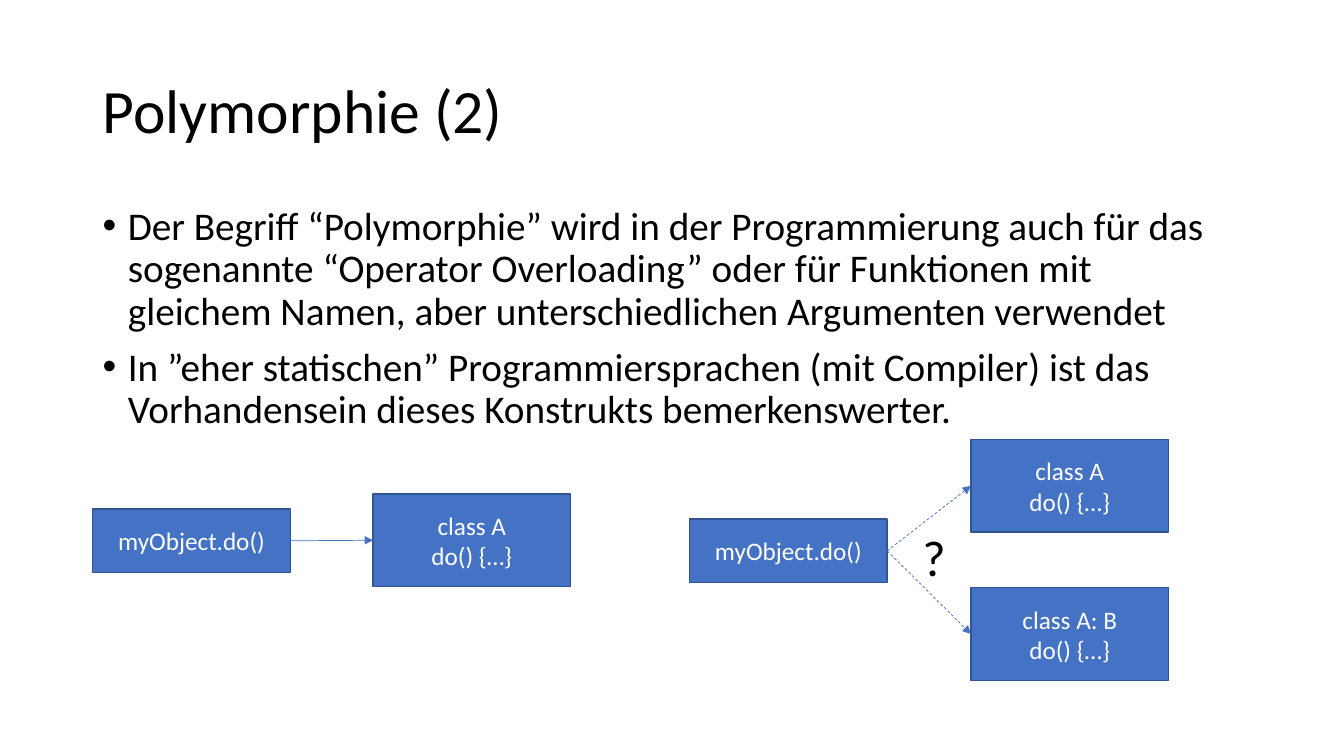
from dataclasses import dataclass

from lxml.etree import SubElement
from pptx import Presentation
from pptx.dml.color import RGBColor as Color
from pptx.enum.dml import MSO_LINE_DASH_STYLE as Dash
from pptx.enum.shapes import MSO_CONNECTOR as Connector, MSO_SHAPE as Preset
from pptx.enum.text import MSO_ANCHOR as Anchor, MSO_AUTO_SIZE as AutoSize, PP_ALIGN as Align
from pptx.oxml.ns import qn
from pptx.shapes.autoshape import Shape
from pptx.slide import Slide
from pptx.text.text import _Paragraph as Paragraph
from pptx.util import Inches, Pt


@dataclass(frozen=True)
class Theme:
    font: str = "Calibri"
    ink: Color = Color(0x00, 0x00, 0x00)
    paper: Color = Color(0xFF, 0xFF, 0xFF)
    accent: Color = Color(0x44, 0x72, 0xC4)
    outline: Color = Color(0x32, 0x54, 0x91)
    title_size: int = 44
    body_size: int = 28
    code_size: int = 18
    question_size: int = 36


@dataclass(frozen=True)
class CodeBox:
    name: str
    text: str
    left: float
    top: float
    height: float


@dataclass(frozen=True)
class Arrow:
    source: str
    target: str
    dashed: bool = False


THEME = Theme()
CODE_WIDTH = 1.96
CALL_HEIGHT = 0.63
CLASS_HEIGHT = 0.92
CODE_BOXES = [
    CodeBox("single call", "myObject.do()", 0.92, 5.05, CALL_HEIGHT),
    CodeBox("open call", "myObject.do()", 6.84, 5.15, CALL_HEIGHT),
    CodeBox("only class", "class A\ndo() {…}", 3.7, 4.9, CLASS_HEIGHT),
    CodeBox("base class", "class A\ndo() {…}", 9.63, 4.36, CLASS_HEIGHT),
    CodeBox("derived class", "class A: B\ndo() {…}", 9.63, 5.83, CLASS_HEIGHT),
]
ARROWS = [
    Arrow("single call", "only class"),
    Arrow("open call", "base class", dashed=True),
    Arrow("open call", "derived class", dashed=True),
]
TITLE = "Polymorphie (2)"
POINTS = [
    "Der Begriff “Polymorphie” wird in der Programmierung auch für das "
    "sogenannte “Operator Overloading” oder für Funktionen mit gleichem "
    "Namen, aber unterschiedlichen Argumenten verwendet",
    "In ”eher statischen” Programmiersprachen (mit Compiler) ist das "
    "Vorhandensein dieses Konstrukts bemerkenswerter.",
]


def write(para: Paragraph, text: str, size: int, color: Color) -> None:
    para.text = text
    for span in para.runs:
        span.font.name = THEME.font
        span.font.size = Pt(size)
        span.font.color.rgb = color


def add_text_box(page: Slide, left: float, top: float, width: float, height: float) -> Shape:
    box = page.shapes.add_textbox(Inches(left), Inches(top), Inches(width), Inches(height))
    box.text_frame.word_wrap = True
    return box


def add_title(page: Slide) -> None:
    frame = add_text_box(page, 0.92, 0.4, 11.5, 1.45).text_frame
    frame.vertical_anchor = Anchor.MIDDLE
    para = frame.paragraphs[0]
    write(para, TITLE, THEME.title_size, THEME.ink)
    para.line_spacing = 0.9


def add_points(page: Slide) -> None:
    frame = add_text_box(page, 0.92, 2, 11.5, 4.76).text_frame
    frame.text = "\n".join(POINTS)
    for para, point in zip(frame.paragraphs, POINTS):
        write(para, point, THEME.body_size, THEME.ink)
        para.line_spacing = 0.9
        para.space_before = Pt(10)
        properties = para._p.get_or_add_pPr()
        properties.set("marL", str(Inches(0.25)))
        properties.set("indent", str(Inches(-0.25)))
        SubElement(properties, qn("a:buFont"), typeface="Arial")
        SubElement(properties, qn("a:buChar"), char="•")


def add_code_box(page: Slide, code: CodeBox) -> Shape:
    box = page.shapes.add_shape(
        Preset.RECTANGLE, Inches(code.left), Inches(code.top), Inches(CODE_WIDTH), Inches(code.height)
    )
    box.shadow.inherit = False
    box.fill.solid()
    box.fill.fore_color.rgb = THEME.accent
    box.line.color.rgb = THEME.outline
    box.line.width = Pt(1)
    box.text_frame.vertical_anchor = Anchor.MIDDLE
    para = box.text_frame.paragraphs[0]
    write(para, code.text, THEME.code_size, THEME.paper)
    para.alignment = Align.CENTER
    return box


def add_arrow(page: Slide, source: Shape, target: Shape, dashed: bool) -> None:
    connector = page.shapes.add_connector(Connector.STRAIGHT, 0, 0, 0, 0)
    connector.begin_connect(source, 3)
    connector.end_connect(target, 1)
    connector.line.color.rgb = THEME.accent
    connector.line.width = Pt(0.5)
    if dashed:
        connector.line.dash_style = Dash.DASH
    SubElement(connector.line._get_or_add_ln(), qn("a:tailEnd"), type="triangle")
    SubElement(connector._element.spPr, qn("a:effectLst"))


def add_question(page: Slide) -> None:
    frame = add_text_box(page, 9.05, 5.17, 0.41, 0.71).text_frame
    frame.word_wrap = False
    frame.auto_size = AutoSize.SHAPE_TO_FIT_TEXT
    write(frame.paragraphs[0], "?", THEME.question_size, THEME.ink)


def main() -> None:
    deck = Presentation()
    deck.slide_width = Inches(13.33)
    deck.slide_height = Inches(7.5)
    page = deck.slides.add_slide(deck.slide_layouts[6])
    add_title(page)
    add_points(page)
    boxes = {code.name: add_code_box(page, code) for code in CODE_BOXES}
    for arrow in ARROWS:
        add_arrow(page, boxes[arrow.source], boxes[arrow.target], arrow.dashed)
    add_question(page)
    deck.save("out.pptx")


if __name__ == "__main__":
    main()
